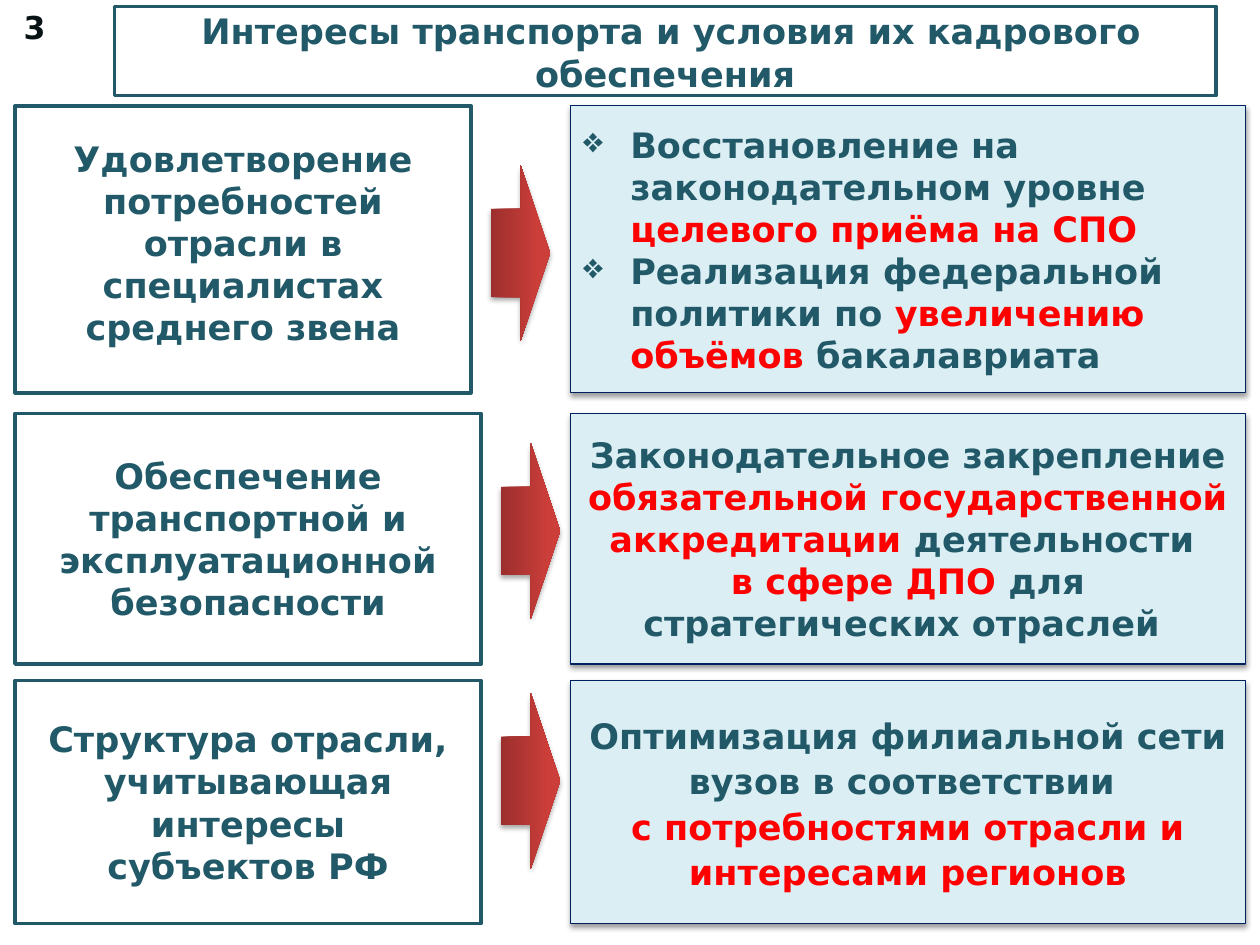
import pptx
import pptx.util
import pptx.dml.color
import pptx.enum.shapes
import pptx.enum.text
import pptx.oxml
import pptx.oxml.ns
from lxml import etree

Pt = pptx.util.Pt
SHAPE = pptx.enum.shapes.MSO_SHAPE
ALIGN = pptx.enum.text.PP_ALIGN
MIDDLE = pptx.enum.text.MSO_ANCHOR.MIDDLE
FONT = "DejaVu Sans"
TEAL, RED, NAVY, ICE, WHITE = "215968", "FF0000", "002060", "DBEEF4", "FFFFFF"

ROWS = [
    {"top": 60.5, "high": 164, "wide": 260.6, "lead": 24, "lift": 8, "bullet": True,
     "need": ["Удовлетворение", "потребностей отрасли в специалистах", "среднего звена"],
     "terms": [
         [("Восстановление на законодательном уровне ", TEAL),
          ("целевого приёма на СПО", RED)],
         [("Реализация федеральной политики по ", TEAL),
          ("увеличению объёмов ", RED), ("бакалавриата", TEAL)]],
     "arrow": (280.6, 94.2)},
    {"top": 236.2, "high": 143.3, "wide": 266.4, "lead": 24, "lift": 0, "bullet": False,
     "need": ["Обеспечение", "транспортной и", "эксплуатационной", "безопасности"],
     "terms": [
         [("Законодательное закрепление ", TEAL),
          ("обязательной государственной аккредитации ", RED),
          ("деятельности ", TEAL)],
         [("в сфере ДПО ", RED), ("для стратегических отраслей ", TEAL)]],
     "arrow": (286.4, 253)},
    {"top": 388.8, "high": 139, "wide": 266.4, "lead": 26, "lift": 0, "bullet": False,
     "need": ["Структура отрасли,", "учитывающая", "интересы", "субъектов РФ"],
     "terms": [
         [("Оптимизация филиальной сети вузов в соответствии ", TEAL)],
         [("с потребностями отрасли и интересами регионов", RED)]],
     "arrow": (286.4, 395.8)},
]


def tint(color, code):
    color.rgb = pptx.dml.color.RGBColor.from_string(code)


def shade(shape, alpha, dist):
    props = shape.fill._xPr
    for old in props.findall(pptx.oxml.ns.qn("a:effectLst")):
        props.remove(old)
    space = pptx.oxml.ns.nsdecls("a")
    props.append(etree.fromstring(
        f'<a:effectLst {space}><a:outerShdw blurRad="{Pt(3.1)}" dist="{Pt(dist)}" '
        f'dir="5400000" rotWithShape="0"><a:srgbClr val="000000">'
        f'<a:alpha val="{alpha * 1000}"/></a:srgbClr></a:outerShdw></a:effectLst>'))


def panel(slide, box, fill, line, width):
    shape = slide.shapes.add_shape(SHAPE.RECTANGLE, *map(Pt, box))
    shape.shadow.inherit = False
    shape.fill.solid()
    tint(shape.fill.fore_color, fill)
    tint(shape.line.color, line)
    shape.line.width = Pt(width)
    return shape


def mark(para):
    props = para._p.get_or_add_pPr()
    props.set("marL", str(Pt(27)))
    props.set("indent", str(-Pt(27)))
    bullet = etree.SubElement(props, pptx.oxml.ns.qn("a:buChar"))
    bullet.set("char", "❖")


def write(frame, paras, lead, size=20, bullet=False):
    frame.vertical_anchor = MIDDLE
    for num, runs in enumerate(paras):
        para = frame.add_paragraph() if num else frame.paragraphs[0]
        para.alignment = ALIGN.LEFT if bullet else ALIGN.CENTER
        para.line_spacing = Pt(lead)
        para.font.size = Pt(size)
        para.font.name = FONT
        para.font.bold = True
        for text, code in runs:
            run = para.add_run()
            run.text = text
            run.font.size = Pt(size)
            run.font.name = FONT
            run.font.bold = True
            tint(run.font.color, code)
        if bullet:
            mark(para)


def title(slide, box):
    frame = panel(slide, box, WHITE, TEAL, 2).text_frame
    frame.word_wrap = True
    frame.margin_left = frame.margin_right = Pt(4.3)
    frame.margin_top = frame.margin_bottom = Pt(2.2)
    write(frame, [[(" Интересы транспорта и условия их кадрового обеспечения", TEAL)]], 24.8)


def number(slide, box):
    frame = slide.shapes.add_textbox(*map(Pt, box)).text_frame
    frame.word_wrap = False
    write(frame, [[("3", "071215")]], 21, 18)


def arrow(slide, left, top):
    shape = slide.shapes.add_shape(SHAPE.RIGHT_ARROW, Pt(left), Pt(top), Pt(33.8), Pt(100.8))
    shape.shadow.inherit = False
    shape.line.fill.background()
    shape.fill.gradient()
    shape.fill.gradient_angle = 0
    for stop, place, code in zip(shape.fill.gradient_stops, (0, 0.8), ("9C2F2D", "CB3E3A")):
        stop.position = place
        tint(stop.color, code)
    shade(shape, 35, 1.8)


def band(slide, left, row):
    top, high = row["top"], row["high"]
    need = panel(slide, (left, top, row["wide"], high), WHITE, TEAL, 2).text_frame
    need.word_wrap = True
    need.margin_bottom = Pt(3.6 + row["lift"])
    write(need, [[(text, TEAL)] for text in row["need"]], 24)
    terms = panel(slide, (left + 317.5, top, 385.5, high), ICE, NAVY, 0.75)
    shade(terms, 38, 1.6)
    terms.text_frame.word_wrap = True
    write(terms.text_frame, row["terms"], row["lead"], bullet=row["bullet"])
    arrow(slide, *row["arrow"])


def main():
    deck = pptx.Presentation()
    deck.slide_width, deck.slide_height = Pt(720), Pt(540)
    slide = deck.slides.add_slide(deck.slide_layouts[6])
    title(slide, (65.5, 3.6, 629.3, 51.1))
    for row in ROWS:
        band(slide, 8.6, row)
    number(slide, (2.9, 2.2, 33.8, 27.4))
    deck.save("out.pptx")


if __name__ == "__main__":
    main()
